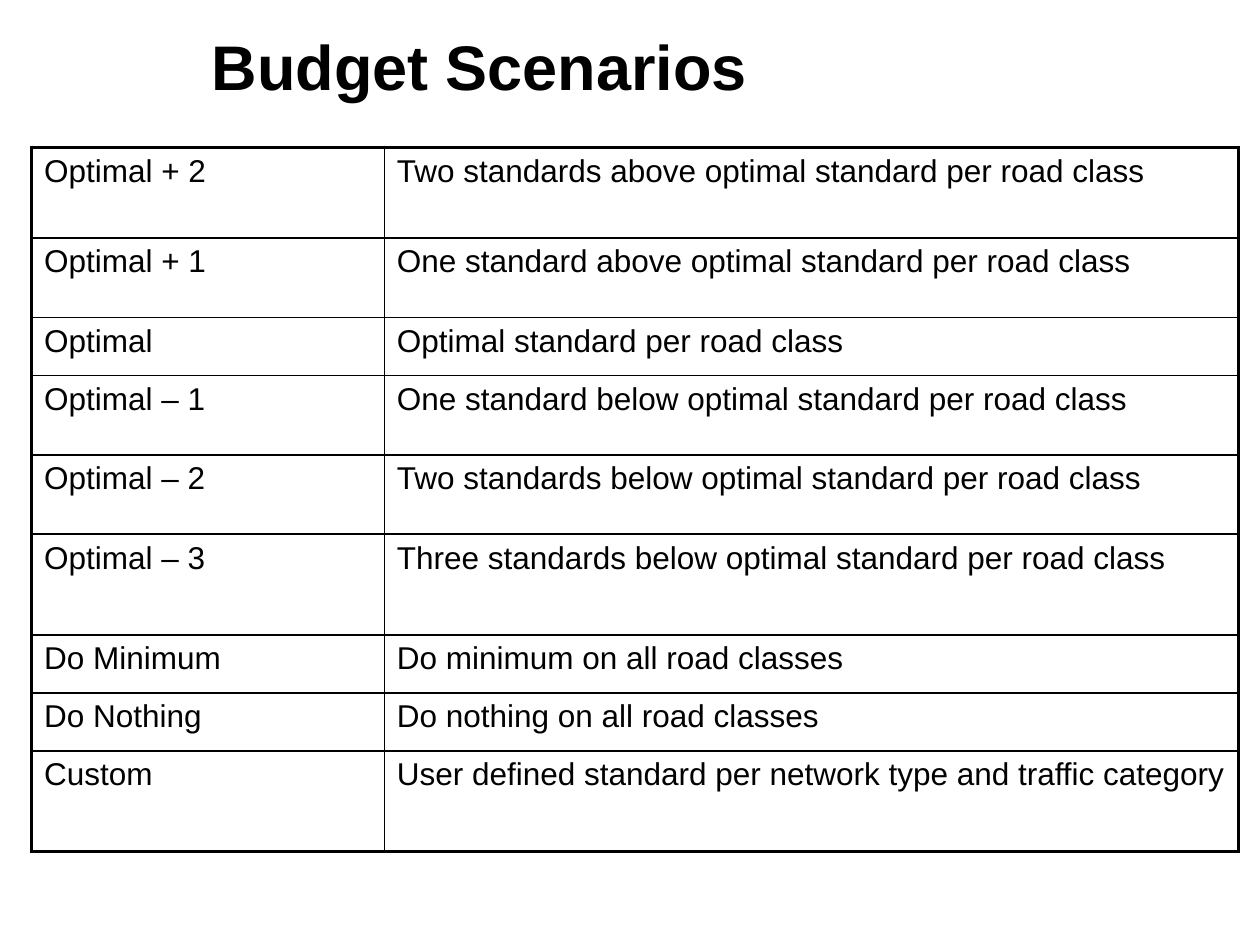
from dataclasses import dataclass

from lxml import etree
from pptx import Presentation
from pptx import util as u
from pptx.dml.color import RGBColor
from pptx.enum import text
from pptx.oxml import ns


@dataclass(frozen=True)
class Theme:
    font: str = "Arial"
    ink: str = "000000"
    title_size: int = 36
    cell_size: int = 18
    outer_line: float = 2.25
    inner_line: float = 1


theme = Theme()


def add_run(paragraph, words, size, bold=False):
    run = paragraph.add_run()
    run.text = words
    run.font.name = theme.font
    run.font.size = u.Pt(size)
    run.font.bold = bold
    run.font.color.rgb = RGBColor.from_string(theme.ink)


def add_border(cell, side, width):
    """Draw one side (L, R, T or B) of a cell; width is in points."""
    line = etree.SubElement(cell._tc.get_or_add_tcPr(), ns.qn(f"a:ln{side}"), w=str(u.Pt(width)))
    fill = etree.SubElement(line, ns.qn("a:solidFill"))
    etree.SubElement(fill, ns.qn("a:srgbClr"), val=theme.ink)


presentation = Presentation()
presentation.slide_width = u.Inches(10)
presentation.slide_height = u.Inches(7.5)
slide = presentation.slides.add_slide(presentation.slide_layouts[5])

title = slide.shapes.title
title.left, title.top = u.Inches(1.58), u.Inches(0.07)
title.width, title.height = u.Inches(8.01), u.Inches(0.9)
title.text_frame.vertical_anchor = text.MSO_ANCHOR.MIDDLE
heading = title.text_frame.paragraphs[0]
heading.alignment = text.PP_ALIGN.LEFT
add_run(heading, "Budget Scenarios", theme.title_size, bold=True)

# Row height in inches, scenario, meaning
scenarios = [
    (0.72, "Optimal + 2", "Two standards above optimal standard per road class"),
    (0.63, "Optimal + 1", "One standard above optimal standard per road class"),
    (0.46, "Optimal", "Optimal standard per road class"),
    (0.63, "Optimal – 1", "One standard below optimal standard per road class"),
    (0.63, "Optimal – 2", "Two standards below optimal standard per road class"),
    (0.8, "Optimal – 3", "Three standards below optimal standard per road class"),
    (0.46, "Do Minimum", "Do minimum on all road classes"),
    (0.46, "Do Nothing", "Do nothing on all road classes"),
    (0.8, "Custom", "User defined standard per network type and traffic category"),
]
column_widths = [2.8, 6.78]
last_row, last_column = len(scenarios) - 1, len(column_widths) - 1

table = slide.shapes.add_table(
    len(scenarios), len(column_widths), u.Inches(0.25), u.Inches(1.17),
    u.Inches(sum(column_widths)), u.Inches(sum(height for height, *_ in scenarios)),
).table
table.first_row = table.horz_banding = False
for column, width in zip(table.columns, column_widths):
    column.width = u.Inches(width)

for row_index, (height, *entries) in enumerate(scenarios):
    table.rows[row_index].height = u.Inches(height)
    for column_index, entry in enumerate(entries):
        cell = table.cell(row_index, column_index)
        on_edge = {
            "L": column_index == 0,
            "R": column_index == last_column,
            "T": row_index == 0,
            "B": row_index == last_row,
        }
        for side, outer in on_edge.items():
            add_border(cell, side, theme.outer_line if outer else theme.inner_line)
        cell.fill.background()
        paragraph = cell.text_frame.paragraphs[0]
        paragraph.alignment = text.PP_ALIGN.LEFT
        space_before = etree.SubElement(paragraph._p.get_or_add_pPr(), ns.qn("a:spcBef"))
        etree.SubElement(space_before, ns.qn("a:spcPct"), val="20000")
        add_run(paragraph, entry, theme.cell_size)

presentation.save("out.pptx")
